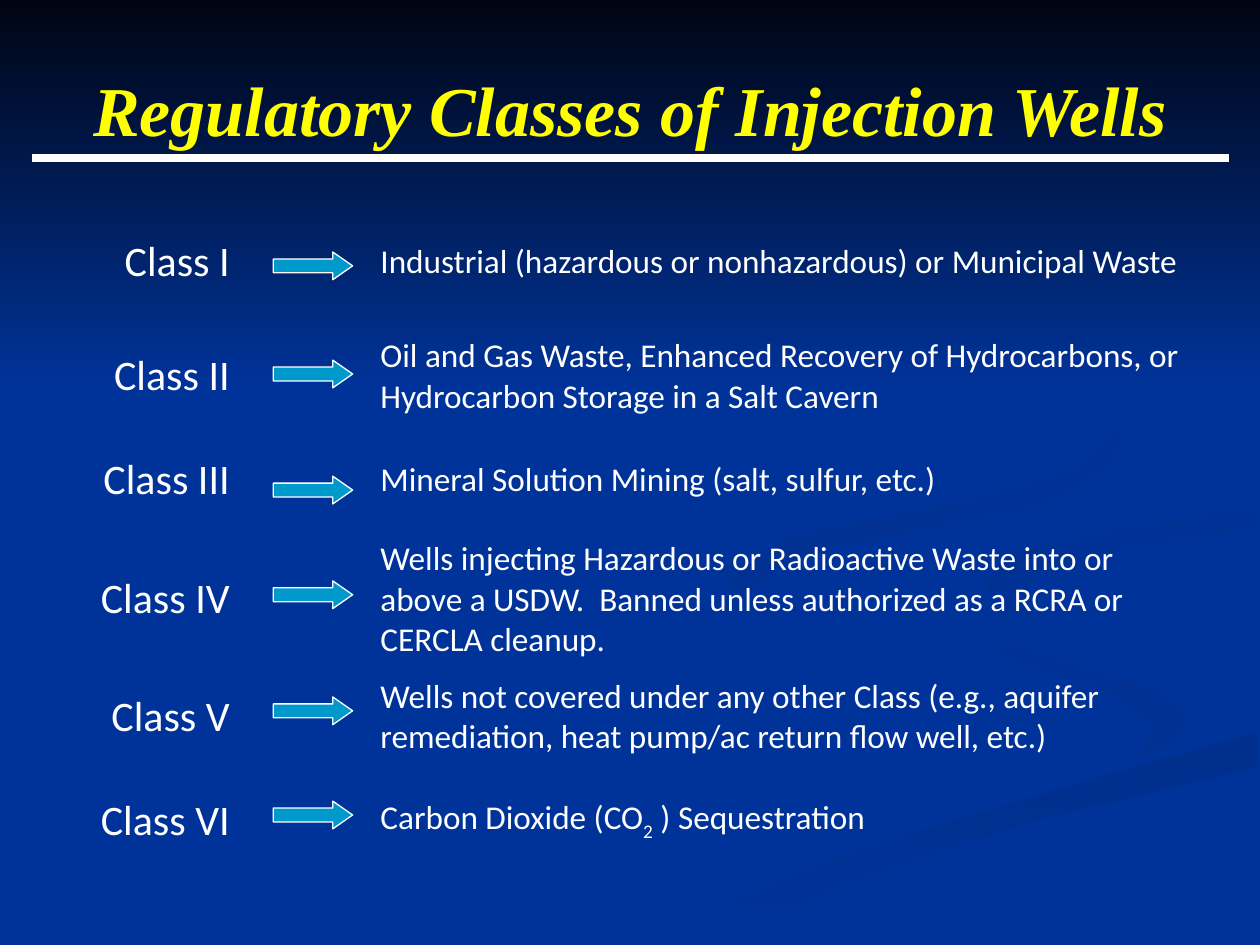
from pptx import Presentation
from pptx.dml.color import RGBColor
from pptx.enum.shapes import MSO_CONNECTOR as Connector, MSO_SHAPE as Shape
from pptx.enum.text import MSO_ANCHOR as Anchor, PP_ALIGN as Align
from pptx.oxml.ns import qn
from pptx.util import Cm, Pt
from lxml import etree

TITLE = "Regulatory Classes of Injection Wells"
CLASSES = [
    ("Class I", ["Industrial (hazardous or nonhazardous) or Municipal Waste"], 2.54, 5.08),
    ("Class II", ["Oil and Gas Waste, Enhanced Recovery of Hydrocarbons, or "
                  "Hydrocarbon Storage in a Salt Cavern"], 2.08, 7.26),
    ("Class III", ["Mineral Solution Mining (salt, sulfur, etc.)"], 2.11, 9.6),
    ("Class IV", ["Wells injecting Hazardous or Radioactive Waste into or above a USDW.  "
                  "Banned unless authorized as a RCRA or CERCLA cleanup."], 2.67, 11.71),
    ("Class V", ["Wells not covered under any other Class (e.g., aquifer remediation, "
                 "heat pump/ac return flow well, etc.)"], 2.08, 14.05),
    ("Class VI", ["Carbon Dioxide (CO", "2", " ) Sequestration"], 2.11, 16.15),
]
COLUMN_WIDTHS = (3.61, 19.25)
WHITE, BLUE = "FFFFFF", "003399"

RIBBON_UNIT = Cm(0.0254)
RIBBONS = [
    ("003193", 45, True, [
        (943, 570), (919, 547), (830, 519), (745, 490), (724, 464), (733, 488),
        (781, 518), (880, 549), (917, 580), (894, 605), (932, 589)]),
    ("002F8C", 90, False, [
        (503, 749), (571, 749), (670, 702), (821, 651), (998, 609), (998, 581),
        (831, 629), (662, 681)]),
    ("003091", 45, False, [
        (781, 460), (791, 478), (826, 496), (805, 476), (828, 453), (896, 435),
        (998, 420), (998, 402), (898, 418), (810, 437)]),
    ("002F8E", 45, False, [
        (683, 430), (825, 402), (883, 370), (893, 335), (843, 275), (762, 233),
        (846, 279), (889, 335), (861, 370), (763, 398), (625, 426), (577, 462),
        (622, 500), (593, 470), (624, 444)]),
]


def color(value):
    return RGBColor.from_string(value)


def set_font(font, size, name="Calibri", value=WHITE):
    font.size = Pt(size)
    font.name = name
    font.color.rgb = color(value)


def fill_gradient(shape, colors, angle):
    shape.shadow.inherit = False
    shape.line.fill.background()
    shape.fill.gradient()
    shape.fill.gradient_angle = -angle % 360
    for stop, value in zip(shape.fill.gradient_stops, colors):
        stop.color.rgb = color(value)


def add_backdrop(slide):
    slide.background.fill.solid()
    slide.background.fill.fore_color.rgb = color(BLUE)
    for shade, angle, fades_in, points in RIBBONS:
        builder = slide.shapes.build_freeform(*points[0], scale=RIBBON_UNIT)
        builder.add_line_segments(points[1:], close=True)
        colors = (BLUE, shade) if fades_in else (shade, BLUE)
        fill_gradient(builder.convert_to_shape(), colors, angle)
    sky = slide.shapes.add_shape(Shape.RECTANGLE, 0, 0, Cm(25.4), Cm(7.82))
    fill_gradient(sky, ("000514", BLUE), 90)


def add_title(slide):
    box = slide.shapes.add_textbox(Cm(1.27), Cm(0.76), Cm(22.86), Cm(2.84))
    frame = box.text_frame
    frame.word_wrap = True
    frame.vertical_anchor = Anchor.MIDDLE
    paragraph = frame.paragraphs[0]
    paragraph.text = TITLE
    paragraph.alignment = Align.CENTER
    set_font(paragraph.font, 40, "Times New Roman", "FFFF00")
    paragraph.font.bold = paragraph.font.italic = True

    rule = slide.shapes.add_connector(Connector.STRAIGHT, Cm(0.64), Cm(3.18), Cm(24.77), Cm(3.18))
    rule.line.color.rgb = color(WHITE)
    rule.line.width = Pt(4.5)
    etree.SubElement(rule._element.spPr, qn("a:effectLst"))


def fill_cell(cell, texts, size):
    cell.fill.background()
    cell.vertical_anchor = Anchor.MIDDLE
    cell.margin_left = cell.margin_right = Cm(0.25)
    cell.margin_top = cell.margin_bottom = Cm(0.13)
    paragraph = cell.text_frame.paragraphs[0]
    paragraph.space_before = Pt(size * 0.2)
    set_font(paragraph.font, size)
    for text in texts:
        paragraph.add_run().text = text
    return paragraph


def add_arrow(slide, top):
    arrow = slide.shapes.add_shape(Shape.RIGHT_ARROW, Cm(5.51), Cm(top), Cm(1.6), Cm(0.56))
    arrow.adjustments[1] = 0.715
    arrow.shadow.inherit = False
    arrow.fill.solid()
    arrow.fill.fore_color.rgb = color("0099CC")
    arrow.line.color.rgb = color(WHITE)
    arrow.line.width = Pt(0.75)


def add_classes(slide):
    heights = [height for _, _, height, _ in CLASSES]
    table = slide.shapes.add_table(len(CLASSES), 2, Cm(1.27), Cm(4.01),
                                   Cm(sum(COLUMN_WIDTHS)), Cm(sum(heights))).table
    table.first_row = table.horz_banding = False
    style = table._tbl.tblPr.find(qn("a:tableStyleId"))
    style.text = "{2D5ABB26-0587-4C30-8999-92F81FD0307C}"
    for column, width in zip(table.columns, COLUMN_WIDTHS):
        column.width = Cm(width)
    for index, (name, texts, height, arrow_top) in enumerate(CLASSES):
        table.rows[index].height = Cm(height)
        fill_cell(table.cell(index, 0), [name], 24).alignment = Align.RIGHT
        paragraph = fill_cell(table.cell(index, 1), texts, 19)
        paragraph.level = 2
        properties = paragraph._p.get_or_add_pPr()
        properties.set("marL", str(Cm(2.54)))
        properties.set("indent", "0")
        for run in paragraph.runs[1:2]:
            run.font._element.set("baseline", "-25000")
        add_arrow(slide, arrow_top)


def main():
    presentation = Presentation()
    presentation.slide_width, presentation.slide_height = Cm(25.4), Cm(19.05)
    slide = presentation.slides.add_slide(presentation.slide_layouts[6])
    add_backdrop(slide)
    add_title(slide)
    add_classes(slide)
    presentation.save("out.pptx")


if __name__ == "__main__":
    main()
